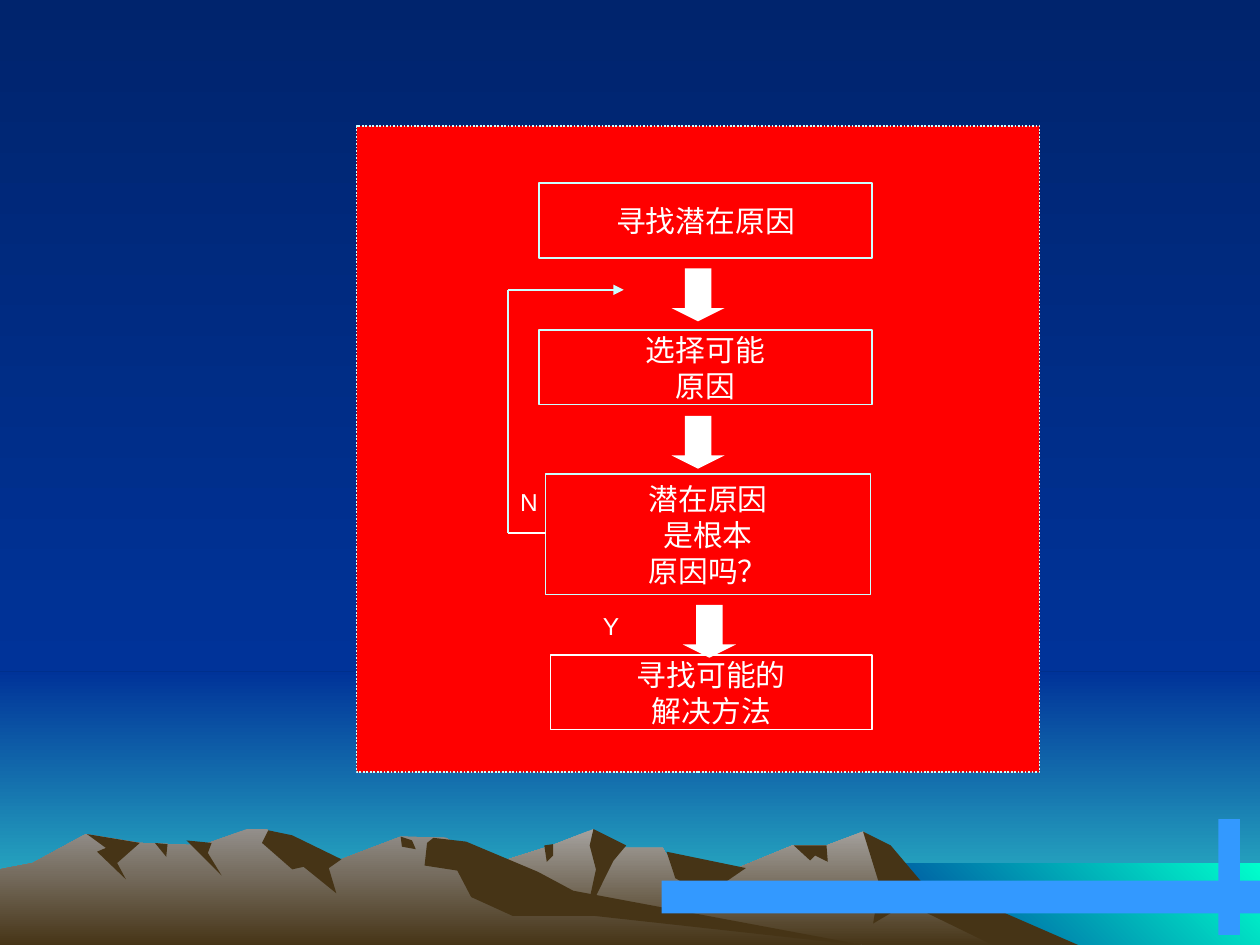
from lxml import etree
from pptx import Presentation
from pptx.dml.color import RGBColor
from pptx.enum.dml import MSO_LINE
from pptx.enum.shapes import MSO_CONNECTOR, MSO_SHAPE
from pptx.enum.text import MSO_ANCHOR, PP_ALIGN
from pptx.oxml.ns import qn
from pptx.util import Inches, Pt

RECTANGLE = MSO_SHAPE.RECTANGLE
DOWN_ARROW = MSO_SHAPE.DOWN_ARROW
STRAIGHT = MSO_CONNECTOR.STRAIGHT
DOTTED = MSO_LINE.ROUND_DOT
MIDDLE = MSO_ANCHOR.MIDDLE
CENTER = PP_ALIGN.CENTER

NIGHT = RGBColor(0x00, 0x24, 0x6D)
BLUE = RGBColor(0x00, 0x33, 0x99)
TEAL = RGBColor(0x33, 0xCC, 0xCC)
AQUA = RGBColor(0x00, 0xFF, 0xCC)
LIGHT_ROCK = RGBColor(0xA5, 0xA2, 0x9F)
GREY_ROCK = RGBColor(0x93, 0x8F, 0x8B)
DARK_ROCK = RGBColor(0x46, 0x34, 0x16)
BAR_BLUE = RGBColor(0x33, 0x99, 0xFF)
RED = RGBColor(0xFF, 0x00, 0x00)
PALE = RGBColor(0xCC, 0xFF, 0xFF)
WHITE = RGBColor(0xFF, 0xFF, 0xFF)

DOWNWARD = 270
UP_RIGHT = 45

BACKDROP = [
    (0, 0, 10, 5.33, NIGHT, BLUE, DOWNWARD),
    (0, 5.33, 10, 2.17, BLUE, TEAL, DOWNWARD),
    (6.83, 6.85, 3.17, 0.67, BLUE, AQUA, UP_RIGHT),
]
BARS = [(5.25, 6.99, 4.75, 0.26, BAR_BLUE), (9.67, 6.5, 0.17, 0.92, BAR_BLUE)]

MOUNTAINS = [
    ((LIGHT_ROCK, DARK_ROCK, DOWNWARD), [
        (821, 751), (723, 698), (702, 671), (685, 660), (656, 671), (629, 671),
        (566, 697), (536, 690), (526, 673), (486, 673), (471, 658), (438, 671),
        (394, 685), (327, 709), (258, 751)]),
    ((DARK_ROCK,), [
        (685, 660), (707, 671), (734, 703), (771, 724), (796, 724), (858, 751),
        (792, 752), (720, 717), (693, 733), (698, 702)]),
    ((DARK_ROCK,), [
        (471, 658), (497, 671), (487, 683), (465, 727), (473, 690), (468, 671)]),
    ((DARK_ROCK,), [(529, 676), (592, 689), (576, 700), (580, 723), (536, 697)]),
    ((DARK_ROCK,), [(630, 671), (656, 671), (657, 684), (647, 679), (643, 683)]),
    ((DARK_ROCK,), [(432, 671), (439, 670), (439, 679), (434, 684)]),
    ((GREY_ROCK, DARK_ROCK, DOWNWARD), [
        (690, 751), (432, 712), (354, 665), (318, 664), (271, 682), (236, 681),
        (212, 658), (196, 658), (160, 671), (111, 669), (68, 662), (26, 685),
        (0, 690), (0, 751)]),
    ((DARK_ROCK,), [
        (213, 659), (232, 663), (271, 682), (261, 689), (267, 709), (241, 688),
        (232, 690), (208, 669)]),
    ((DARK_ROCK,), [
        (339, 669), (344, 665), (370, 668), (427, 692), (455, 707), (690, 751),
        (472, 727), (407, 727), (374, 712), (363, 691), (337, 687)]),
    ((DARK_ROCK,), [(318, 664), (327, 667), (330, 674), (319, 672)]),
    ((DARK_ROCK,), [(148, 667), (168, 669), (165, 677), (176, 695)]),
    ((DARK_ROCK,), [(123, 669), (133, 670), (132, 680)]),
    ((DARK_ROCK,), [
        (69, 662), (111, 669), (93, 685), (100, 698), (77, 676), (84, 673)]),
]

STEPS = [
    (4.28, 1.45, 2.64, 0.6, PALE, "寻找潜在原因"),
    (4.28, 2.62, 2.64, 0.59, PALE, "选择可能\n原因"),
    (4.33, 3.76, 2.58, 0.96, PALE, "潜在原因\n是根本\n原因吗？"),
    (4.37, 5.2, 2.55, 0.59, WHITE, "寻找可能的\n解决方法"),
]
ANSWERS = [(4.58, 4.8, 0.54, "Y"), (4.03, 3.82, 0.33, "N")]
LOOP = [
    (4.33, 4.23, 4.03, 4.23, WHITE),
    (4.03, 4.23, 4.03, 2.3, PALE),
    (4.03, 2.3, 4.95, 2.3, PALE),
]
ARROWS = [(5.33, 2.13), (5.33, 3.3), (5.42, 4.8)]


def paint(shape, first, second=None, angle=None):
    shape.shadow.inherit = False
    shape.line.fill.background()
    if second is None:
        shape.fill.solid()
        shape.fill.fore_color.rgb = first
        return
    shape.fill.gradient()
    shape.fill.gradient_angle = angle
    for stop, color in zip(shape.fill.gradient_stops, (first, second)):
        stop.color.rgb = color


def write(frame, text, size, font):
    frame.text = text
    for paragraph in frame.paragraphs:
        paragraph.alignment = CENTER
        for run in paragraph.runs:
            run.font.size = Pt(size)
            run.font.name = font
            run.font.color.rgb = WHITE
            etree.SubElement(run.font._element, qn("a:ea"), typeface=font)


prs = Presentation()
prs.slide_width = Inches(10)
prs.slide_height = Inches(7.5)
slide = prs.slides.add_slide(prs.slide_layouts[6])
shapes = slide.shapes

sky = slide.background.fill
sky.gradient()
sky.gradient_angle = DOWNWARD
for stop, color in zip(sky.gradient_stops, (NIGHT, BLUE)):
    stop.color.rgb = color

for left, top, width, height, *colors in BACKDROP:
    band = shapes.add_shape(RECTANGLE, *map(Inches, (left, top, width, height)))
    paint(band, *colors)

for colors, outline in MOUNTAINS:
    builder = shapes.build_freeform(*outline[0], scale=Inches(0.01))
    builder.add_line_segments(outline[1:], close=True)
    paint(builder.convert_to_shape(), *colors)

for *bounds, color in BARS:
    paint(shapes.add_shape(RECTANGLE, *map(Inches, bounds)), color)

panel = shapes.add_shape(RECTANGLE, Inches(2.83), Inches(1), Inches(5.42), Inches(5.13))
paint(panel, RED)
panel.line.color.rgb = PALE
panel.line.width = Pt(1)
panel.line.dash_style = DOTTED

for *bounds, border, text in STEPS:
    step = shapes.add_shape(RECTANGLE, *map(Inches, bounds))
    step.shadow.inherit = False
    step.fill.background()
    step.line.color.rgb = border
    step.line.width = Pt(1)
    step.text_frame.vertical_anchor = MIDDLE
    write(step.text_frame, text, 17, "Noto Sans CJK SC")
    for paragraph in step.text_frame.paragraphs:
        paragraph.line_spacing = Pt(20.5)

for left, top, width, letter in ANSWERS:
    answer = shapes.add_textbox(Inches(left), Inches(top), Inches(width), Inches(0.33))
    answer.text_frame.word_wrap = True
    write(answer.text_frame, letter, 14, "Arial")

for *ends, color in LOOP:
    segment = shapes.add_connector(STRAIGHT, *map(Inches, ends))
    segment.line.color.rgb = color
    segment.line.width = Pt(1)
    etree.SubElement(segment._element.spPr, qn("a:effectLst"))
etree.SubElement(segment.line._get_or_add_ln(), qn("a:tailEnd"), type="triangle")

for left, top in ARROWS:
    arrow = shapes.add_shape(DOWN_ARROW, Inches(left), Inches(top), Inches(0.42), Inches(0.42))
    arrow.adjustments[0] = 0.5
    arrow.adjustments[1] = 0.25
    paint(arrow, WHITE)

prs.save("out.pptx")
